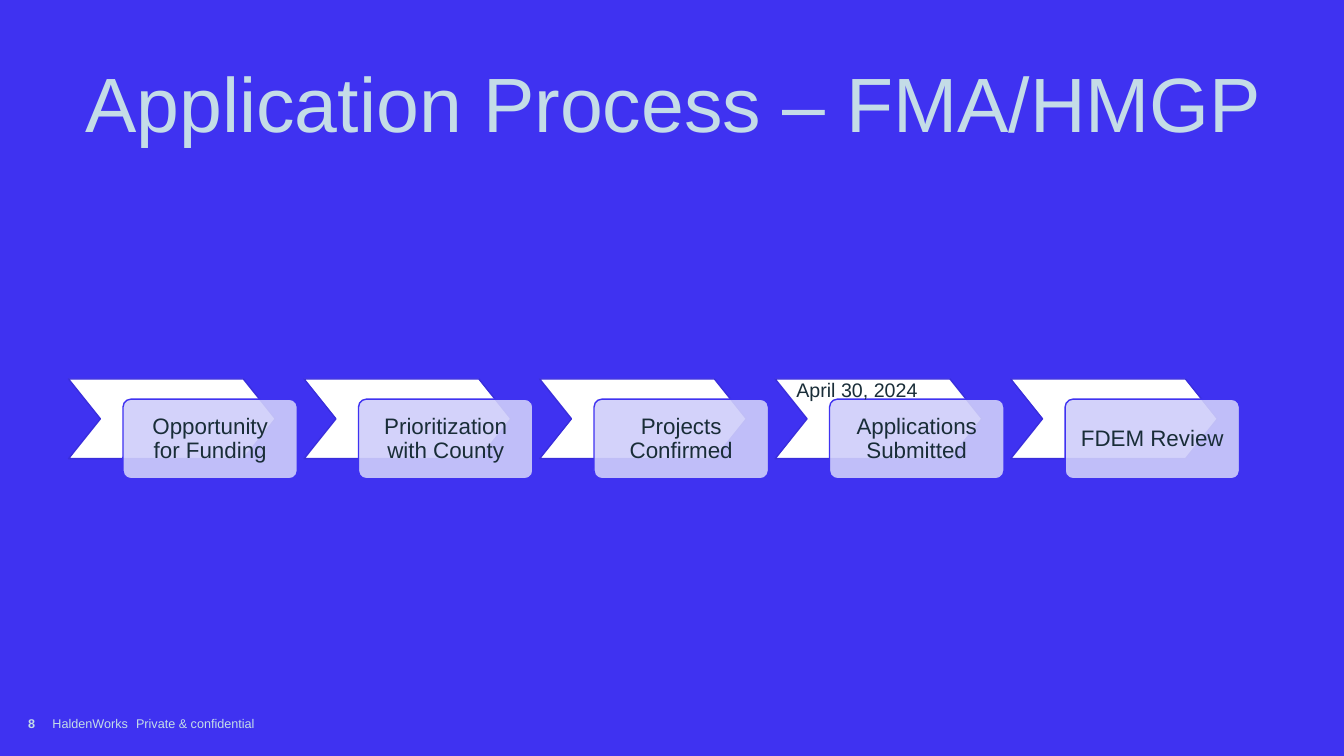
from pptx import Presentation
from pptx import util as u
from pptx.dml.color import RGBColor
from pptx.enum import shapes, text
from pptx.oxml.ns import qn
from lxml import etree

HUES = {"blue": "3F32F1", "edge": "392DDB", "pale": "C4DCE7",
        "lilac": "CFCEFA", "white": "FFFFFF", "ink": "192D38"}


def hue(name):
    return RGBColor.from_string(HUES[name])


def write(shape, words, size, color, inset=0):
    frame = shape.text_frame
    frame.word_wrap = True
    frame.auto_size = text.MSO_AUTO_SIZE.NONE
    frame.margin_left = frame.margin_right = u.Inches(inset)
    frame.margin_top = frame.margin_bottom = u.Inches(inset)
    frame.text = words
    para = frame.paragraphs[0]
    para.font.name = "Arial"
    para.font.size = u.Pt(size)
    para.font.color.rgb = hue(color)
    return para


deck = Presentation()
deck.slide_width, deck.slide_height = u.Inches(13.33), u.Inches(7.5)
slide = deck.slides.add_slide(deck.slide_layouts[5])
slide.background.fill.solid()
slide.background.fill.fore_color.rgb = hue("blue")

# Title
title = slide.shapes.title
title.left, title.top = u.Inches(0.54), u.Inches(0.52)
title.width, title.height = u.Inches(12.28), u.Inches(1.1)
para = write(title, "Application Process – FMA/HMGP", 55, "pale")
para.alignment = text.PP_ALIGN.CENTER
para.line_spacing = 0.9
title.text_frame.vertical_anchor = text.MSO_ANCHOR.MIDDLE

# Footer
for left, width, words, bold in [(0.28, 0.25, "8", True),
                                 (0.52, 0.82, "HaldenWorks", False),
                                 (1.35, 5.34, "Private & confidential", False)]:
    box = slide.shapes.add_textbox(u.Inches(left), u.Inches(7.1),
                                   u.Inches(width), u.Inches(0.25))
    write(box, words, 9, "pale").font.bold = bold

# Process steps: a chevron with a label card in front
steps = ["Opportunity for Funding", "Prioritization with County",
         "Projects Confirmed", "Applications Submitted", "FDEM Review"]
kinds = shapes.MSO_SHAPE
for i, step in enumerate(steps):
    left = 0.68 + i * 2.336
    for kind, x, y, width, bend, fill, line in [
            (kinds.CHEVRON, left, 3.76, 2.05, 0.4, "white", "edge"),
            (kinds.ROUNDED_RECTANGLE, left + 0.54, 3.96, 1.73, 0.1,
             "lilac", "blue")]:
        card = slide.shapes.add_shape(kind, u.Inches(x), u.Inches(y),
                                      u.Inches(width), u.Inches(0.79))
        card.adjustments[0] = bend
        card.shadow.inherit = False
        card.fill.solid()
        card.fill.fore_color.rgb = hue(fill)
        card.line.color.rgb = hue(line)
        card.line.width = u.Pt(1)

    # The card, drawn last, is slightly see-through and holds the label
    tint = card.fill._xPr.find(qn("a:solidFill"))[0]
    etree.SubElement(tint, qn("a:alpha")).set("val", "90000")
    para = write(card, step, 16, "ink", 0.13)
    para.alignment = text.PP_ALIGN.CENTER
    para.line_spacing = 0.9
    card.text_frame.vertical_anchor = text.MSO_ANCHOR.MIDDLE

# Submission date
date = slide.shapes.add_textbox(u.Inches(7.8), u.Inches(3.7),
                                u.Inches(3.02), u.Inches(0.34))
write(date, "April 30, 2024", 14, "ink")
date.text_frame.margin_left = date.text_frame.margin_right = u.Inches(0.1)
date.text_frame.margin_top = date.text_frame.margin_bottom = u.Inches(0.05)

deck.save("out.pptx")
